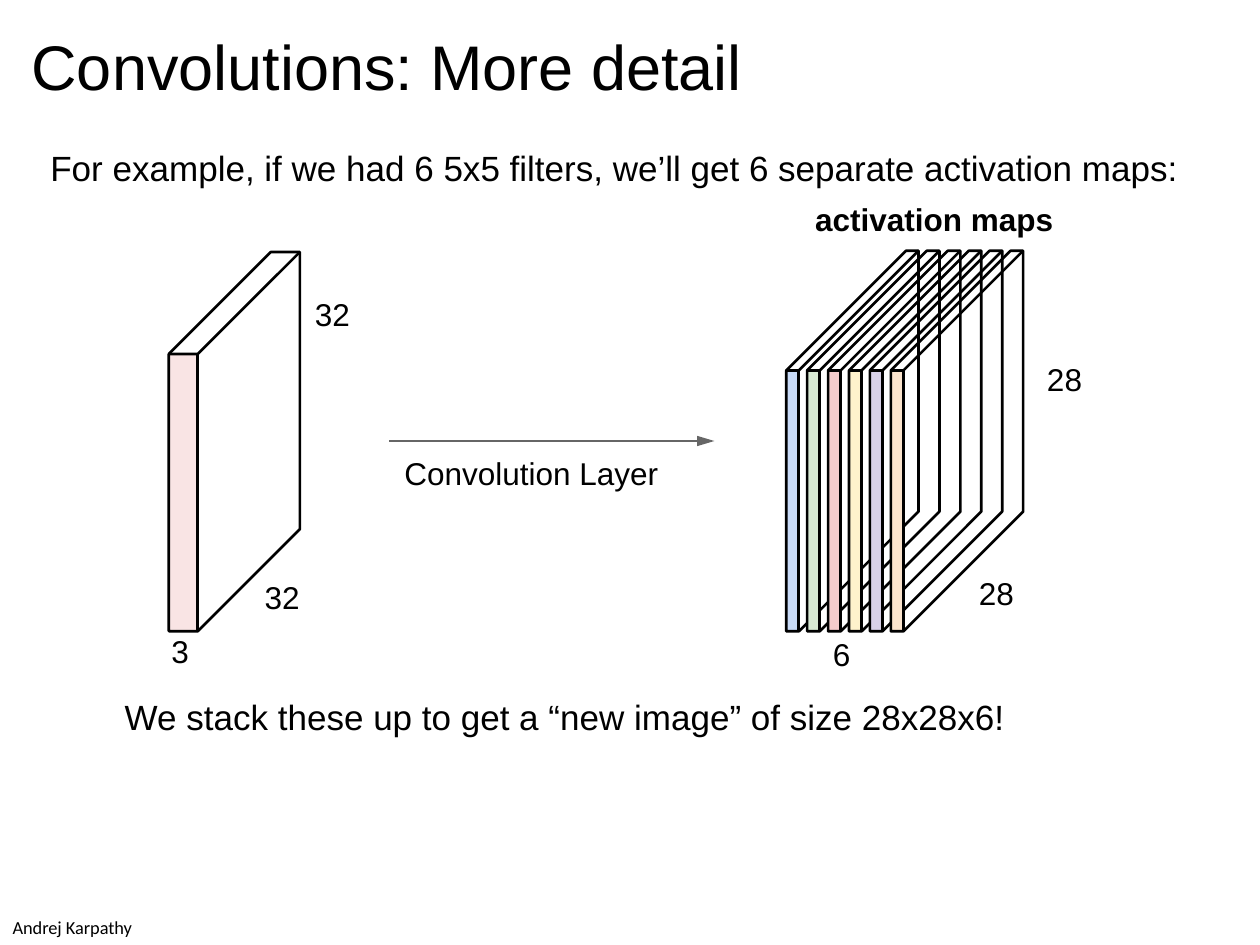
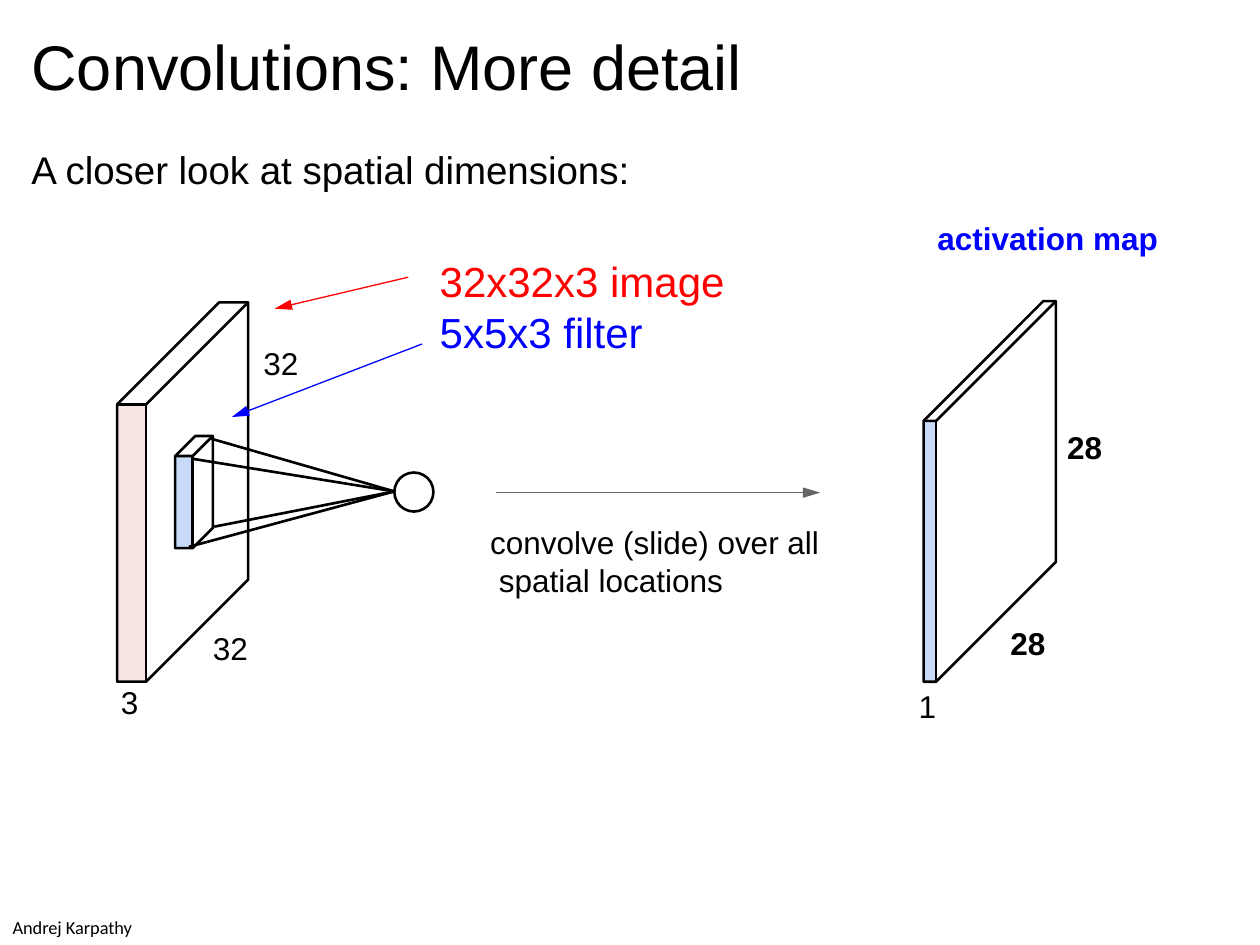
import lxml.etree
import pptx
import pptx.dml.color
import pptx.enum.shapes
import pptx.enum.text
import pptx.oxml.ns
import pptx.util

Inches = pptx.util.Inches
Pt = pptx.util.Pt
RGBColor = pptx.dml.color.RGBColor
SHAPES = pptx.enum.shapes.MSO_SHAPE
qn = pptx.oxml.ns.qn

COLORS = {
    "ink": "000000", "gray": "666666", "red": "FF0000", "strong blue": "0000FF",
    "pink": "F4CCCC", "blue": "C8DAF7", "green": "D8E9D3",
    "yellow": "FFF2CC", "purple": "D8D1E8", "orange": "FBE4CD",
}
OUTLINE = 1.5


def add_label(slide, text, left, top, width, size=18, color="ink", bold=False, font="Arial"):
    """Place text without insets, so left and top are where the text starts."""
    box = slide.shapes.add_textbox(Inches(left), Inches(top), Inches(width), Pt(size * 1.2))
    frame = box.text_frame
    frame.word_wrap = True
    frame.margin_left = frame.margin_right = frame.margin_top = frame.margin_bottom = 0
    frame.text = text
    for run in frame.paragraphs[0].runs:
        run.font.name = font
        run.font.size = Pt(size)
        run.font.bold = bold
        run.font.color.rgb = RGBColor.from_string(COLORS[color])


def add_line(slide, x1, y1, x2, y2, color="ink", weight=OUTLINE, arrow=False):
    line = slide.shapes.add_connector(
        pptx.enum.shapes.MSO_CONNECTOR.STRAIGHT, Inches(x1), Inches(y1), Inches(x2), Inches(y2))
    line.line.color.rgb = RGBColor.from_string(COLORS[color])
    line.line.width = Pt(weight)
    properties = line._element.spPr
    if arrow:
        lxml.etree.SubElement(properties.find(qn("a:ln")), qn("a:tailEnd"),
                              type="triangle", w="med", len="lg")
    lxml.etree.SubElement(properties, qn("a:effectLst"))


prs = pptx.Presentation()
prs.slide_width = Inches(10)
prs.slide_height = Inches(7.5)

# Title, lead sentence and credit on both slides
leads = [
    ("For example, if we had 6 5x5 filters, we’ll get 6 separate activation maps:", 0.4, 20),
    ("A closer look at spatial dimensions:", 0.25, 22),
]
for lead, lead_left, lead_size in leads:
    slide = prs.slides.add_slide(prs.slide_layouts[5])
    title = slide.shapes.title
    title.left, title.top = Inches(0.25), Inches(0.22)
    title.width, title.height = Inches(9.51), Inches(0.61)
    heading = title.text_frame
    heading.text = "Convolutions: More detail"
    heading.auto_size = pptx.enum.text.MSO_AUTO_SIZE.NONE
    heading.vertical_anchor = pptx.enum.text.MSO_ANCHOR.TOP
    heading.margin_left = heading.margin_right = heading.margin_top = heading.margin_bottom = 0
    heading.paragraphs[0].alignment = pptx.enum.text.PP_ALIGN.LEFT
    heading_font = heading.paragraphs[0].runs[0].font
    heading_font.name = "Arial"
    heading_font.size = Pt(36)
    heading_font.color.rgb = RGBColor.from_string(COLORS["ink"])
    add_label(slide, lead, lead_left, 1.16, 9.36, lead_size)
    add_label(slide, "Andrej Karpathy", 0.1, 7.27, 1.2, 10.5, font="Calibri")

stacking, closeup = prs.slides

# Slabs: slide, left, front bottom, thickness, front height, depth, front colour
image_size = (0.23, 2.2, 0.81)
map_size = (0.1, 2.07, 0.95)
map_step = 0.83 / 5
map_colors = ["blue", "green", "pink", "yellow", "purple", "orange"]
slabs = [(stacking, 1.34, 5.01, *image_size, "pink")]
for i, map_color in enumerate(map_colors):
    slabs.append((stacking, 6.24 + i * map_step, 5.01, *map_size, map_color))
slabs += [
    (closeup, 1.39, 4.35, 0.14, 0.73, 0.16, "blue"),
    (closeup, 0.93, 5.41, *image_size, "pink"),
    (closeup, 7.33, 5.41, *map_size, "blue"),
]

for slide, left, bottom, thickness, height, depth, color in slabs:
    right, top = left + thickness, bottom - height
    front = slide.shapes.add_shape(
        SHAPES.RECTANGLE, Inches(left), Inches(top), Inches(thickness), Inches(height))
    front.shadow.inherit = False
    front.line.fill.background()
    front.fill.solid()
    front.fill.fore_color.rgb = RGBColor.from_string(COLORS[color])
    if thickness == image_size[0]:
        tint = front._element.spPr.find(qn("a:solidFill"))[0]
        lxml.etree.SubElement(tint, qn("a:alpha"), val="52000")

    silhouette = [(left, top), (left + depth, top - depth), (right + depth, top - depth),
                  (right + depth, bottom - depth), (right, bottom), (left, bottom)]
    top_edges = [(left, top), (right, top), (right + depth, top - depth)]
    for points, closed in [(silhouette, True), (top_edges, False)]:
        corners = [(Inches(x), Inches(y)) for x, y in points]
        builder = slide.shapes.build_freeform(*corners[0])
        builder.add_line_segments(corners[1:], close=closed)
        edges = builder.convert_to_shape()
        edges.shadow.inherit = False
        edges.fill.background()
        edges.line.color.rgb = RGBColor.from_string(COLORS["ink"])
        edges.line.width = Pt(OUTLINE)
    add_line(slide, right, top, right, bottom)

# Neuron and the rays from the filter's corners
neuron = closeup.shapes.add_shape(
    SHAPES.OVAL, Inches(3.13), Inches(3.75), Inches(0.31), Inches(0.31))
neuron.shadow.inherit = False
neuron.fill.background()
neuron.line.color.rgb = RGBColor.from_string(COLORS["ink"])
neuron.line.width = Pt(OUTLINE)
for corner_x, corner_y in [(1.5, 4.34), (1.52, 3.64), (1.67, 3.48), (1.7, 4.18)]:
    add_line(closeup, corner_x, corner_y, 3.13, 3.9)

arrows = [
    (stacking, 3.09, 3.5, 5.67, 3.5, "gray"),
    (closeup, 3.24, 2.2, 2.18, 2.45, "red"),
    (closeup, 3.35, 2.73, 1.84, 3.31, "strong blue"),
    (closeup, 3.94, 3.91, 6.51, 3.91, "gray"),
]
for arrow in arrows:
    add_line(*arrow, weight=0.75, arrow=True)

# Labels: text, left, top, width, then size, colour and bold where they differ
stacking_labels = [
    ("activation maps", 6.47, 1.59, 2.1, 18, "ink", True),
    ("32", 2.5, 2.34, 0.4),
    ("32", 2.1, 4.59, 0.4),
    ("3", 1.36, 5.02, 0.2),
    ("Convolution Layer", 3.21, 3.6, 2.3),
    ("28", 8.31, 2.86, 0.4),
    ("28", 7.77, 4.56, 0.4),
    ("6", 6.61, 5.04, 0.2),
    ("We stack these up to get a “new image” of size 28x28x6!", 0.99, 5.52, 7.3, 20),
]
closeup_labels = [
    ("activation map", 7.44, 1.74, 2, 18, "strong blue", True),
    ("32x32x3 image", 3.49, 2.03, 2.6, 24, "red"),
    ("5x5x3 filter", 3.49, 2.43, 2.6, 24, "strong blue"),
    ("32", 2.09, 2.73, 0.4),
    ("32", 1.69, 4.99, 0.4),
    ("3", 0.96, 5.42, 0.2),
    ("convolve (slide) over all\v spatial locations", 3.89, 4.15, 3),
    ("28", 8.47, 3.4, 0.4, 18, "ink", True),
    ("28", 8.02, 4.95, 0.4, 18, "ink", True),
    ("1", 7.29, 5.45, 0.2),
]
for slide, labels in [(stacking, stacking_labels), (closeup, closeup_labels)]:
    for label in labels:
        add_label(slide, *label)

prs.save("out.pptx")
